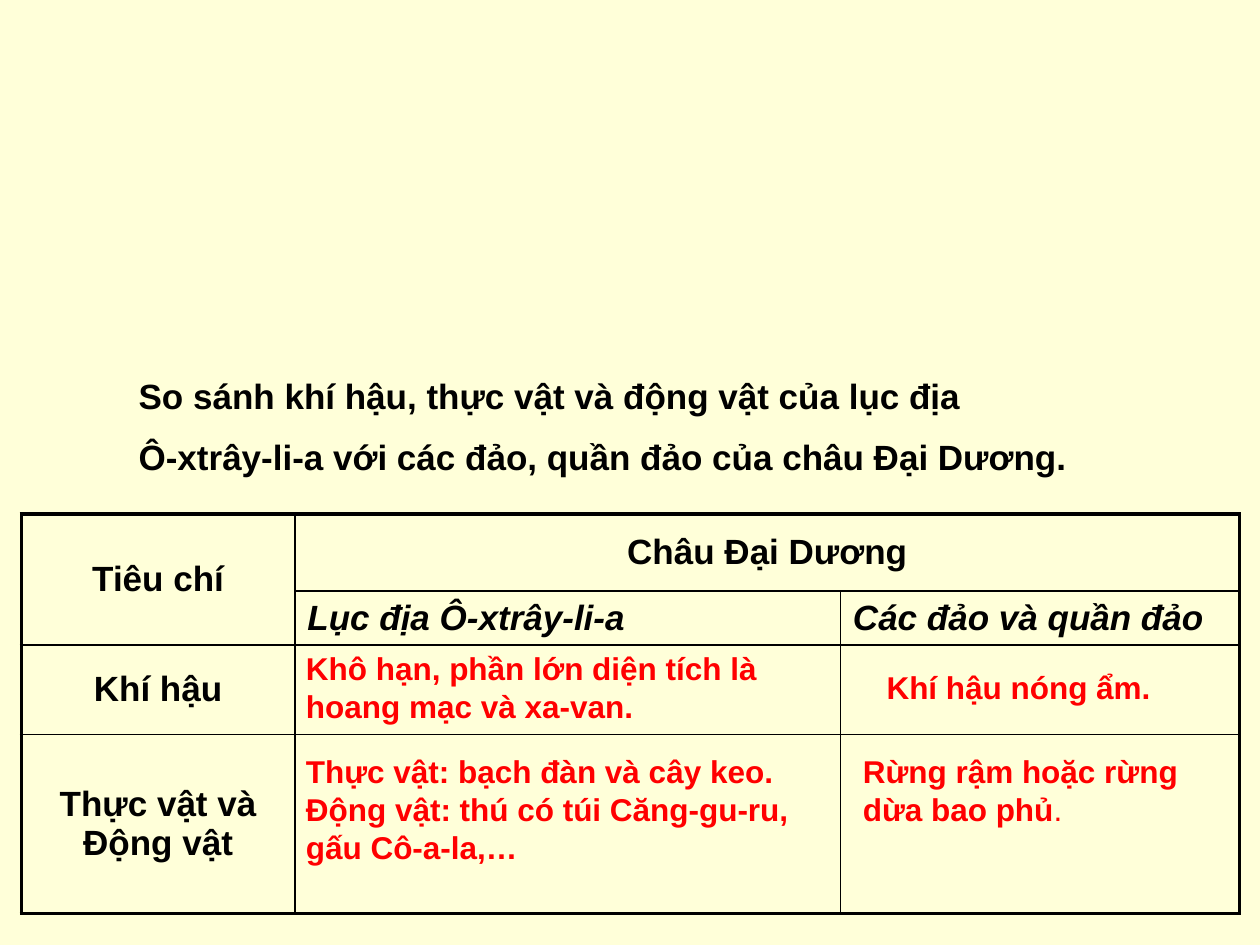
"""Builds a slide comparing nature on the Australian continent and the Pacific islands."""
from lxml import etree
from pptx import Presentation
from pptx.dml.color import RGBColor
from pptx.enum.text import MSO_ANCHOR, MSO_AUTO_SIZE, PP_ALIGN
from pptx.oxml.ns import qn
from pptx.util import Inches, Pt

LEFT, CENTER = PP_ALIGN.LEFT, PP_ALIGN.CENTER
TOP, MIDDLE = MSO_ANCHOR.TOP, MSO_ANCHOR.MIDDLE
NO_AUTOFIT = MSO_AUTO_SIZE.NONE
COLORS = {"background": "FFFFD9", "text": "000000", "answer": "FF0000"}
OUTER, INNER = 2.25, 1


def style(paragraph, size, color, align=LEFT, italic=False):
    paragraph.alignment = align
    font = paragraph.font
    font.name, font.size, font.bold, font.italic = "Arial", Pt(size), True, italic
    font.color.rgb = RGBColor.from_string(COLORS[color])


def add_border(cell, side, width):
    line = etree.SubElement(cell._tc.get_or_add_tcPr(), qn(f"a:ln{side}"), w=str(Pt(width)))
    fill = etree.SubElement(line, qn("a:solidFill"))
    etree.SubElement(fill, qn("a:srgbClr"), val=COLORS["text"])


prs = Presentation()
prs.slide_width, prs.slide_height = Inches(10), Inches(7.5)
slide = prs.slides.add_slide(prs.slide_layouts[5])
slide.background.fill.solid()
slide.background.fill.fore_color.rgb = RGBColor.from_string(COLORS["background"])

question = slide.shapes.title
question.left, question.top = Inches(1), Inches(2.92)
question.width, question.height = Inches(8.5), Inches(0.94)
question.text_frame.text = (
    "So sánh khí hậu, thực vật và động vật của lục địa\n"
    "Ô-xtrây-li-a với các đảo, quần đảo của châu Đại Dương."
)
question.text_frame.vertical_anchor = TOP
question.text_frame.auto_size = NO_AUTOFIT
for paragraph in question.text_frame.paragraphs:
    style(paragraph, 20, "text")
question.text_frame.paragraphs[1].space_before = Pt(11)

column_widths = [2.17, 4.33, 3.17]
row_heights = [0.61, 0.43, 0.71, 1.42]
comparison = slide.shapes.add_table(
    len(row_heights), len(column_widths),
    Inches(0.17), Inches(4.08), Inches(sum(column_widths)), Inches(sum(row_heights)),
).table
comparison.first_row = comparison.horz_banding = False
for column, width in zip(comparison.columns, column_widths):
    column.width = Inches(width)
for row, height in zip(comparison.rows, row_heights):
    row.height = Inches(height)
comparison.cell(0, 0).merge(comparison.cell(1, 0))
comparison.cell(0, 1).merge(comparison.cell(0, 2))

headings = {
    (0, 0): "Tiêu chí",
    (0, 1): "Châu Đại Dương",
    (1, 1): "Lục địa Ô-xtrây-li-a",
    (1, 2): "Các đảo và quần đảo",
    (2, 0): "Khí hậu",
    (3, 0): "Thực vật và Động vật",
}
for r in range(len(row_heights)):
    for c in range(len(column_widths)):
        cell = comparison.cell(r, c)
        if not cell.is_spanned:
            last_row = r + cell.span_height == len(row_heights)
            last_column = c + cell.span_width == len(column_widths)
            edges = {"L": c == 0, "R": last_column, "T": r == 0, "B": last_row}
            for side, on_outside in edges.items():
                add_border(cell, side, OUTER if on_outside else INNER)
        cell.fill.background()
        cell.vertical_anchor = MIDDLE
        cell.text = headings.get((r, c), "")
        subheading = r == 1 and c > 0
        style(cell.text_frame.paragraphs[0], 20, "text", LEFT if subheading else CENTER, subheading)

answers = [
    (2.33, 5.1, 4.08, 0.71, LEFT, "Khô hạn, phần lớn diện tích là hoang mạc và xa-van."),
    (2.33, 5.92, 4.5, 1.01, LEFT,
     "Thực vật: bạch đàn và cây keo.\nĐộng vật: thú có túi Căng-gu-ru,\ngấu Cô-a-la,…"),
    (6.75, 5.25, 2.67, 0.4, CENTER, "Khí hậu nóng ẩm."),
    (6.75, 5.92, 3, 0.74, LEFT, "Rừng rậm hoặc rừng dừa bao phủ"),
]
for left, top, width, height, align, text in answers:
    answer = slide.shapes.add_textbox(Inches(left), Inches(top), Inches(width), Inches(height))
    answer.text_frame.word_wrap = True
    answer.text_frame.text = text
    for paragraph in answer.text_frame.paragraphs:
        style(paragraph, 18, "answer", align)

full_stop = answer.text_frame.paragraphs[0].add_run()
full_stop.text = "."
full_stop.font.bold = False

prs.save("out.pptx")
